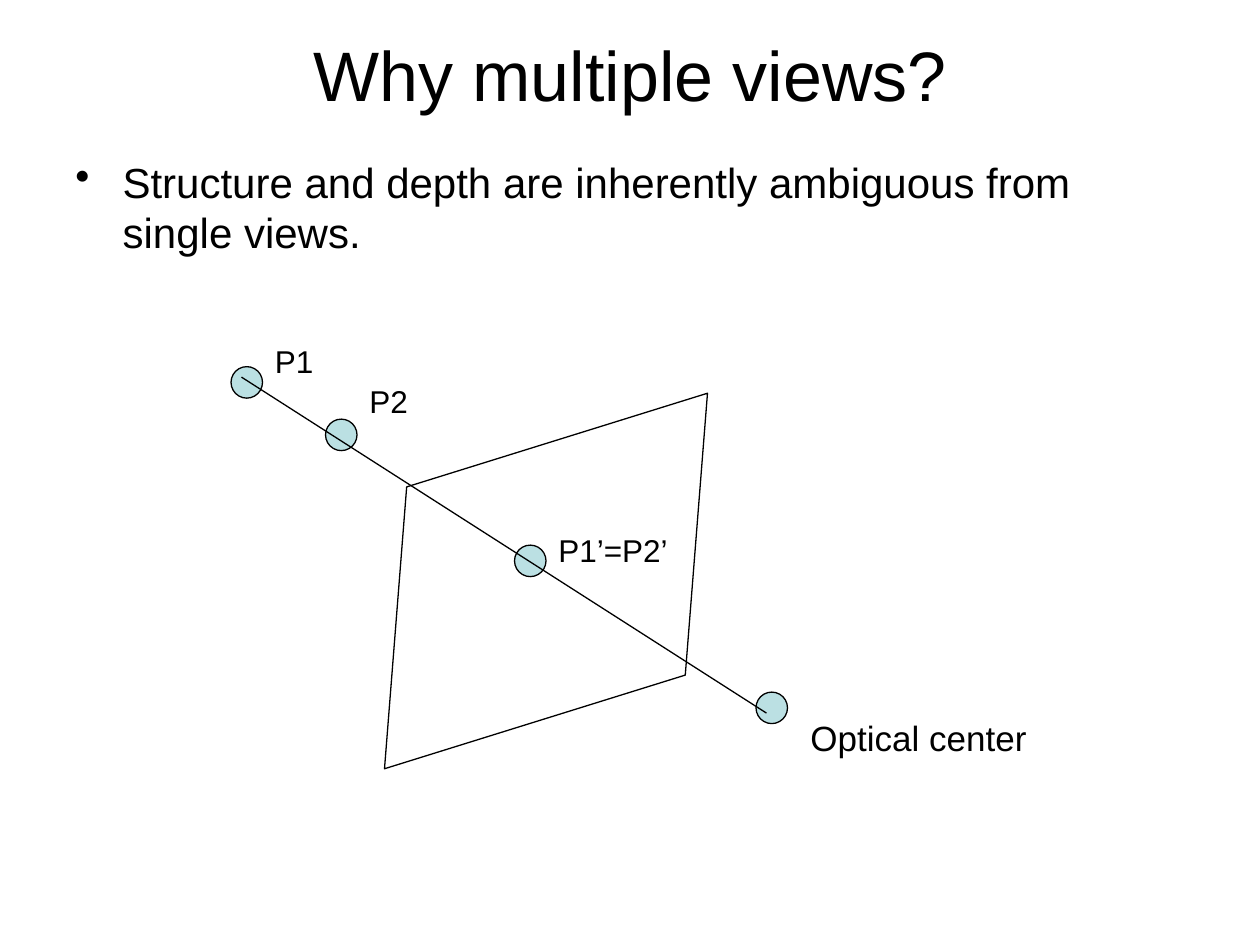
from lxml import etree
from pptx import Presentation
from pptx import util as u
from pptx.dml.color import RGBColor
from pptx.enum import shapes, text
from pptx.oxml import ns

Pt = u.Pt
BLACK, POINT_FILL = "000000", "BBE0E3"
LINE_WIDTH = Pt(0.75)
POINT_SIZE = 18


def color(hex_string):
    return RGBColor.from_string(hex_string)


def add_text(left, top, width, height, content, size):
    box = slide.shapes.add_textbox(Pt(left), Pt(top), Pt(width), Pt(height))
    box.text_frame.word_wrap = True
    box.text_frame.text = content
    font = box.text_frame.paragraphs[0].runs[0].font
    font.name, font.size = "Arial", Pt(size)
    font.color.rgb = color(BLACK)
    return box.text_frame


deck = Presentation()
deck.slide_width, deck.slide_height = Pt(720), Pt(540)
slide = deck.slides.add_slide(deck.slide_layouts[6])

# Title
title = add_text(36, -3, 648, 90, "Why multiple views?", 40)
title.vertical_anchor = text.MSO_ANCHOR.MIDDLE
title.paragraphs[0].alignment = text.PP_ALIGN.CENTER

# Bulleted statement
statement = add_text(
    36, 85.7, 648, 356.4,
    "Structure and depth are inherently ambiguous from single views.", 24)
statement.paragraphs[0].space_before = Pt(4.8)
bullet_format = statement.paragraphs[0]._p.get_or_add_pPr()
bullet_format.set("marL", str(Pt(27)))
bullet_format.set("indent", str(-Pt(27)))
etree.SubElement(bullet_format, ns.qn("a:buChar")).set("char", "•")

# Image plane
image_plane = slide.shapes.add_shape(
    shapes.MSO_SHAPE.PARALLELOGRAM, Pt(192), Pt(257), Pt(240), Pt(150))
image_plane.adjustments[0] = 0.4
image_plane.rotation = 342.7
image_plane.shadow.inherit = False
image_plane.fill.background()
image_plane.line.color.rgb = color(BLACK)
image_plane.line.width = LINE_WIDTH

# Scene points, their projection and the optical center
for left, top in [(132, 209.5), (186, 239.5), (294, 311.5), (432, 395.5)]:
    point = slide.shapes.add_shape(
        shapes.MSO_SHAPE.OVAL, Pt(left), Pt(top), Pt(POINT_SIZE), Pt(POINT_SIZE))
    point.shadow.inherit = False
    point.fill.solid()
    point.fill.fore_color.rgb = color(POINT_FILL)
    point.line.color.rgb = color(BLACK)
    point.line.width = LINE_WIDTH

# Viewing ray
ray = slide.shapes.add_connector(
    shapes.MSO_CONNECTOR.STRAIGHT, Pt(138), Pt(215.5), Pt(438), Pt(407.5))
ray.line.color.rgb = color(BLACK)
ray.line.width = LINE_WIDTH
etree.SubElement(ray._element.spPr, ns.qn("a:effectLst"))

# Point labels
for left, top, width, height, label, size in [
    (150, 192, 60, 29, "P1", 18),
    (204, 215, 60, 29, "P2", 18),
    (312, 300, 102, 29, "P1’=P2’", 18),
    (456, 406, 234, 31, "Optical center", 20),
]:
    add_text(left, top, width, height, label, size)

deck.save("out.pptx")
